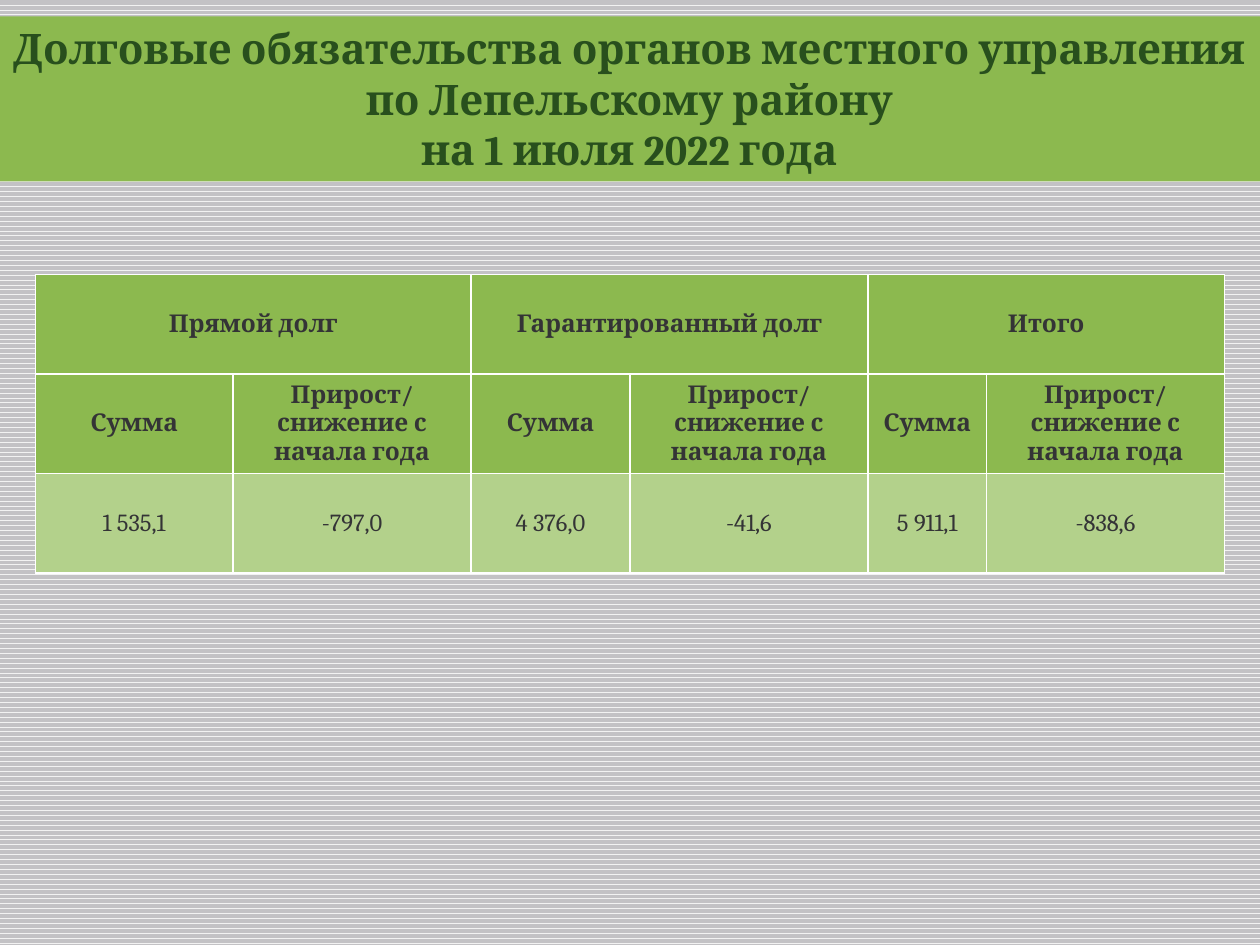
from lxml import etree
from pptx import Presentation
from pptx import util as u
from pptx.dml.color import RGBColor
from pptx.enum import dml, text
from pptx.oxml import ns

TITLE = [
    "Долговые обязательства органов местного управления",
    "по Лепельскому району",
    "на 1 июля 2022 года",
]
GROUPS = ["Прямой долг", "Гарантированный долг", "Итого"]
MEASURES = ["Сумма", "Прирост/снижение с начала года"]
VALUES = ["1 535,1", "-797,0", "4 376,0", "-41,6", "5 911,1", "-838,6"]
COLUMN_WIDTHS = [1.57, 1.89, 1.26, 1.89, 0.94, 1.89]
ROW_HEIGHT = 0.79

FONT = "Cambria"
GREEN = RGBColor(0x8C, 0xB9, 0x4F)
LIGHT_GREEN = RGBColor(0xB3, 0xD1, 0x8B)
DARK_GREEN = RGBColor(0x28, 0x4F, 0x1D)
CHARCOAL = RGBColor(0x34, 0x34, 0x36)
WHITE = RGBColor(0xFF, 0xFF, 0xFF)
PALE_GRAY = RGBColor(0xF2, 0xF2, 0xF2)
GRAY = RGBColor(0xC3, 0xC2, 0xC5)


def write(frame, lines, size, color, bold=True):
    for index, line in enumerate(lines):
        paragraph = frame.paragraphs[0] if index == 0 else frame.add_paragraph()
        paragraph.alignment = text.PP_ALIGN.CENTER
        run = paragraph.add_run()
        run.text = line
        run.font.name = FONT
        run.font.size = u.Pt(size)
        run.font.bold = bold
        run.font.color.rgb = color


def add_borders(cell, color, width):
    properties = cell._tc.get_or_add_tcPr()
    for side in ("lnL", "lnR", "lnT", "lnB"):
        line = etree.SubElement(properties, ns.qn(f"a:{side}"), w=str(u.Pt(width)))
        fill = etree.SubElement(line, ns.qn("a:solidFill"))
        etree.SubElement(fill, ns.qn("a:srgbClr"), val=str(color))


def add_title(slide):
    title = slide.shapes.title
    title.left, title.top = u.Inches(-0.01), u.Inches(0.13)
    title.width, title.height = u.Inches(10.01), u.Inches(1.31)
    title.fill.solid()
    title.fill.fore_color.rgb = GREEN
    frame = title.text_frame
    frame.word_wrap = True
    frame.auto_size = text.MSO_AUTO_SIZE.NONE
    frame.vertical_anchor = text.MSO_ANCHOR.TOP
    frame.margin_left = frame.margin_right = u.Inches(0.05)
    write(frame, TITLE, 24, DARK_GREEN)


def add_debt_table(slide):
    header = [label for group in GROUPS for label in (group, "")]
    rows = [header, MEASURES * len(GROUPS), VALUES]
    table = slide.shapes.add_table(
        len(rows), len(COLUMN_WIDTHS), u.Inches(0.28), u.Inches(2.18),
        u.Inches(sum(COLUMN_WIDTHS)), u.Inches(ROW_HEIGHT * len(rows)),
    ).table
    for column, width in zip(table.columns, COLUMN_WIDTHS):
        column.width = u.Inches(width)
    for first in range(0, len(COLUMN_WIDTHS), 2):
        table.cell(0, first).merge(table.cell(0, first + 1))
    for row_index, labels in enumerate(rows):
        table.rows[row_index].height = u.Inches(ROW_HEIGHT)
        is_header = row_index < 2
        for column_index, label in enumerate(labels):
            cell = table.cell(row_index, column_index)
            add_borders(cell, WHITE, 1)
            cell.fill.solid()
            cell.fill.fore_color.rgb = GREEN if is_header else LIGHT_GREEN
            cell.vertical_anchor = text.MSO_ANCHOR.MIDDLE
            if label:
                write(cell.text_frame, [label], 14, CHARCOAL, bold=is_header)


def main():
    presentation = Presentation()
    presentation.slide_width, presentation.slide_height = u.Inches(10), u.Inches(7.5)
    slide = presentation.slides.add_slide(presentation.slide_layouts[5])
    background = slide.background.fill
    background.patterned()
    background.pattern = dml.MSO_PATTERN.WAVE
    background.fore_color.rgb = PALE_GRAY
    background.back_color.rgb = GRAY
    add_title(slide)
    add_debt_table(slide)
    presentation.save("out.pptx")


if __name__ == "__main__":
    main()
